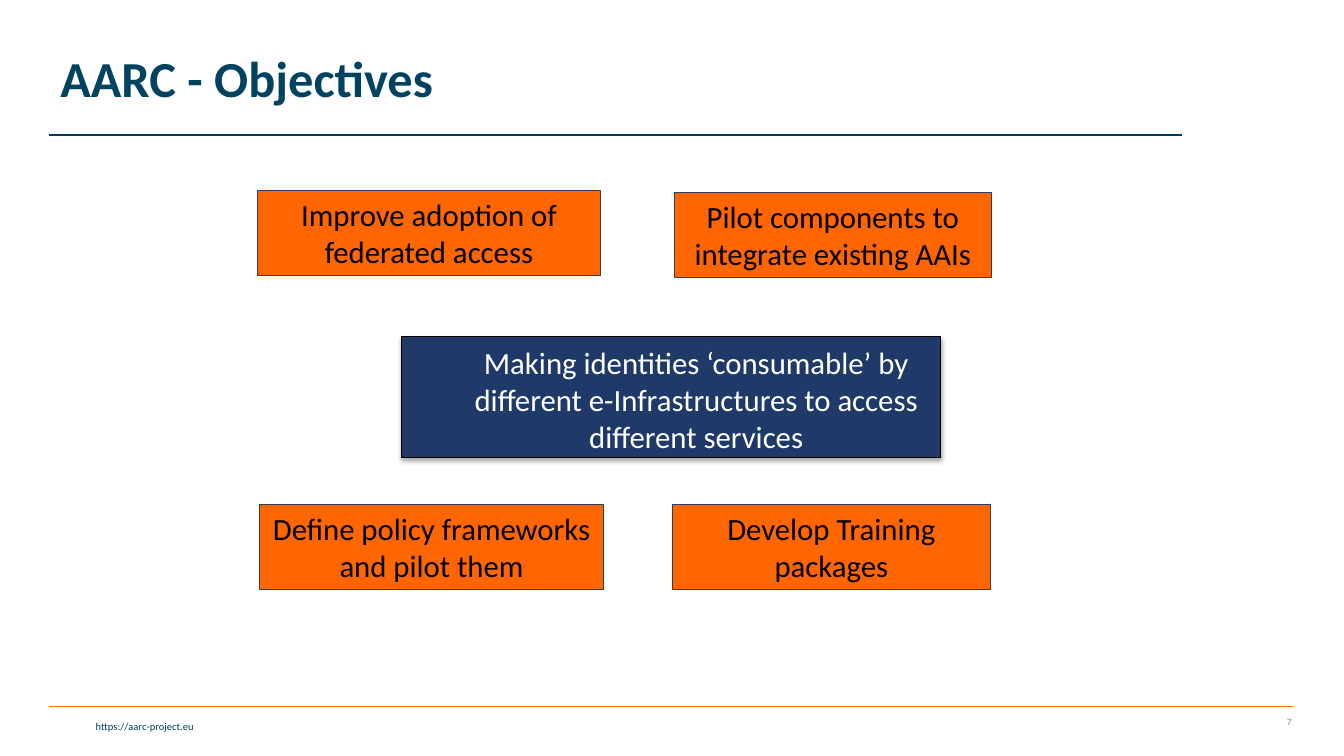
from lxml.etree import SubElement
from pptx import Presentation
from pptx.dml.color import RGBColor
from pptx.enum.shapes import MSO_CONNECTOR, MSO_SHAPE
from pptx.enum.text import MSO_ANCHOR, MSO_AUTO_SIZE, PP_ALIGN
from pptx.oxml.ns import qn
from pptx.util import Pt

PX = 9144  # EMU, a hundredth of an inch

OBJECTIVES = [
    ("Improve adoption of federated access", (255, 189, 341, 84)),
    ("Pilot components to integrate existing AAIs", (669, 191, 314, 84)),
    ("Define policy frameworks and pilot them", (257, 501, 342, 84)),
    ("Develop Training packages", (667, 501, 315, 84)),
]
GOAL = ("Making identities ‘consumable’ by different e-Infrastructures "
        "to access different services")


def px(*lengths):
    return [length * PX for length in lengths]


def colour(hex_code):
    return RGBColor.from_string(hex_code)


def write(shape, text, size, ink, bold=False, align=PP_ALIGN.LEFT,
          anchor=MSO_ANCHOR.TOP, spacing=None, grow=False, inset=None, indent=0):
    frame = shape.text_frame
    frame.word_wrap = True
    frame.vertical_anchor = anchor
    frame.auto_size = MSO_AUTO_SIZE.SHAPE_TO_FIT_TEXT if grow else MSO_AUTO_SIZE.NONE
    if inset is not None:
        frame.margin_left = frame.margin_right = inset * PX
        frame.margin_top = frame.margin_bottom = inset * PX
    paragraph = frame.paragraphs[0]
    paragraph.alignment = align
    paragraph.line_spacing = spacing
    if indent:
        paragraph.level = 1
        properties = paragraph._p.get_or_add_pPr()
        properties.set("marL", str(indent * PX))
        properties.set("indent", "0")
    run = paragraph.add_run()
    run.text = text
    run.font.name = "Calibri"
    run.font.size = Pt(size)
    run.font.bold = bold
    run.font.color.rgb = colour(ink)


def add_label(slide, place, text, size, ink, **text_format):
    write(slide.shapes.add_textbox(*px(*place)), text, size, ink, **text_format)


def add_rule(slide, left, right, y, ink):
    rule = slide.shapes.add_connector(MSO_CONNECTOR.STRAIGHT, *px(left, y, right, y))
    rule.line.color.rgb = colour(ink)
    rule.line.width = Pt(1)
    SubElement(rule._element.spPr, qn("a:effectLst"))


def add_box(slide, place, text, fill, border, ink, **text_format):
    box = slide.shapes.add_shape(MSO_SHAPE.RECTANGLE, *px(*place))
    box.shadow.inherit = False
    box.fill.solid()
    box.fill.fore_color.rgb = colour(fill)
    box.line.color.rgb = colour(border)
    box.line.width = Pt(0.75)
    write(box, text, 22, ink, align=PP_ALIGN.CENTER, **text_format)
    return box


def drop_shadow(box):
    """Give the box a soft black shadow straight below it."""
    effects = box._element.spPr.find(qn("a:effectLst"))
    shadow = SubElement(effects, qn("a:outerShdw"), blurRad=str(Pt(3.1)),
                        dist=str(Pt(1.8)), dir="5400000", rotWithShape="0")
    black = SubElement(shadow, qn("a:srgbClr"), val="000000")
    SubElement(black, qn("a:alpha"), val="35000")


def main():
    deck = Presentation()
    deck.slide_width, deck.slide_height = px(1333, 750)
    slide = deck.slides.add_slide(deck.slide_layouts[6])

    add_rule(slide, 49, 1282, 701, "F57B20")
    add_label(slide, (3, 709, 199, 23), "https://aarc-project.eu", 7.5, "003F5E",
              align=PP_ALIGN.RIGHT, grow=True)
    add_rule(slide, 49, 1172, 134, "003959")
    add_label(slide, (1210, 701, 81, 30), "7", 6.8, "8C8C8C",
              align=PP_ALIGN.RIGHT, anchor=MSO_ANCHOR.MIDDLE)
    add_label(slide, (50, 8, 1051, 145), "AARC - Objectives", 36, "004361",
              bold=True, anchor=MSO_ANCHOR.MIDDLE, spacing=0.9)

    for objective, place in OBJECTIVES:
        add_box(slide, place, objective, "FF6600", "333F50", "000000", grow=True)
    goal = add_box(slide, (398, 334, 535, 120), GOAL, "1F3A69", "000000", "FFFFFF",
                   inset=7, indent=50)
    drop_shadow(goal)

    deck.save("out.pptx")


if __name__ == "__main__":
    main()
